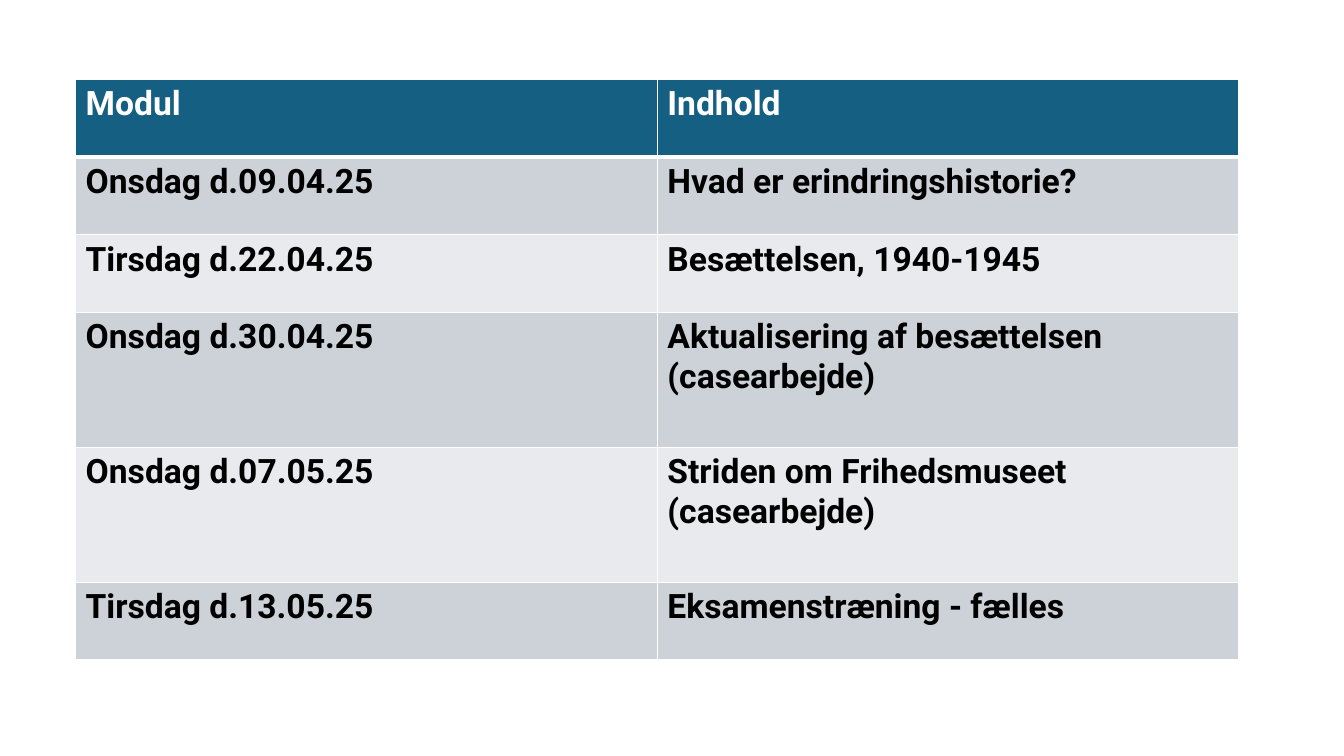
import pptx
import pptx.dml.color
import pptx.oxml.ns
import pptx.util
from lxml import etree

Inches = pptx.util.Inches
RGBColor = pptx.dml.color.RGBColor

WHITE = RGBColor(0xFF, 0xFF, 0xFF)
BLACK = RGBColor(0x00, 0x00, 0x00)
HEADER_BLUE = RGBColor(0x15, 0x60, 0x82)
BAND_DARK = RGBColor(0xCC, 0xD2, 0xD8)
BAND_LIGHT = RGBColor(0xE8, 0xEA, 0xED)

SCHEDULE = [
    ("Modul", "Indhold"),
    ("Onsdag d.09.04.25", "Hvad er erindringshistorie?"),
    ("Tirsdag d.22.04.25", "Besættelsen, 1940-1945"),
    ("Onsdag d.30.04.25", "Aktualisering af besættelsen (casearbejde)"),
    ("Onsdag d.07.05.25", "Striden om Frihedsmuseet (casearbejde)"),
    ("Tirsdag d.13.05.25", "Eksamenstræning - fælles"),
]
ROW_HEIGHTS = [0.77, 0.77, 0.77, 1.34, 1.34, 0.77]
COLUMN_WIDTH = 5.77


class ScheduleSlide:
    """Holds the text style and the slide, and draws the module schedule on it."""

    def __init__(self, slide):
        self.slide = slide
        self.font_format = {"name": "Roboto", "size": pptx.util.Pt(24), "bold": True}

    def border(self, cell, side, points):
        qn = pptx.oxml.ns.qn
        line = etree.SubElement(
            cell._tc.get_or_add_tcPr(), qn(f"a:ln{side}"), w=str(pptx.util.Pt(points))
        )
        fill = etree.SubElement(line, qn("a:solidFill"))
        etree.SubElement(fill, qn("a:srgbClr"), val=str(WHITE))

    def cell(self, cell, text, fill, color, borders):
        for side, points in borders.items():
            self.border(cell, side, points)
        cell.fill.solid()
        cell.fill.fore_color.rgb = fill
        run = cell.text_frame.paragraphs[0].add_run()
        run.text = text
        for name, value in self.font_format.items():
            setattr(run.font, name, value)
        run.font.color.rgb = color

    def table(self, left, top, rows, heights, column_width):
        columns = len(rows[0])
        schedule = self.slide.shapes.add_table(
            len(rows), columns, Inches(left), Inches(top),
            Inches(column_width * columns), Inches(sum(heights)),
        ).table
        for column in schedule.columns:
            column.width = Inches(column_width)
        for index, (entries, height) in enumerate(zip(rows, heights)):
            schedule.rows[index].height = Inches(height)
            band = BAND_DARK if index % 2 else BAND_LIGHT
            fill, color = (band, BLACK) if index else (HEADER_BLUE, WHITE)
            borders = {
                "L": 1,
                "R": 1,
                "T": 3 if index == 1 else 1,
                "B": 3 if index == 0 else 1,
            }
            for column, text in enumerate(entries):
                self.cell(schedule.cell(index, column), text, fill, color, borders)


def main():
    deck = pptx.Presentation()
    deck.slide_width = Inches(13.33)
    deck.slide_height = Inches(7.5)
    plan = ScheduleSlide(deck.slides.add_slide(deck.slide_layouts[6]))
    plan.table(0.75, 0.79, SCHEDULE, ROW_HEIGHTS, COLUMN_WIDTH)
    deck.save("out.pptx")


if __name__ == "__main__":
    main()
